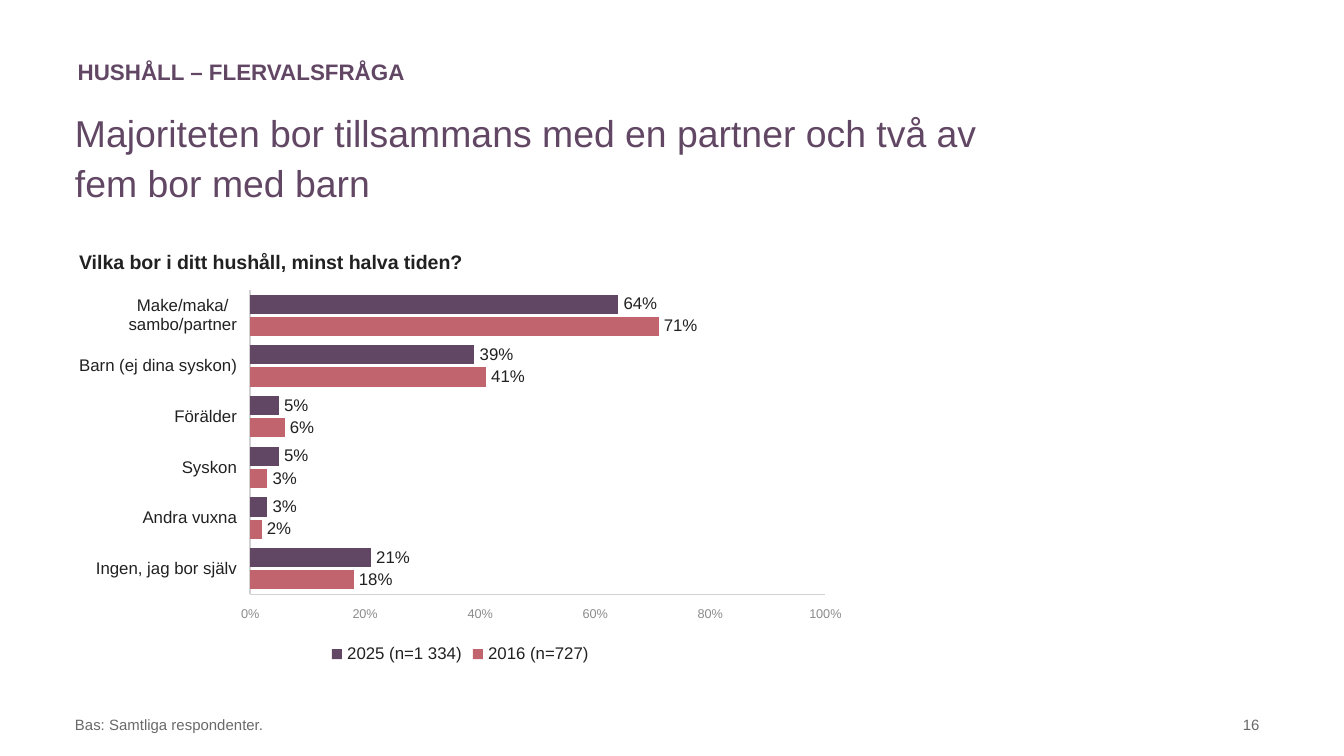
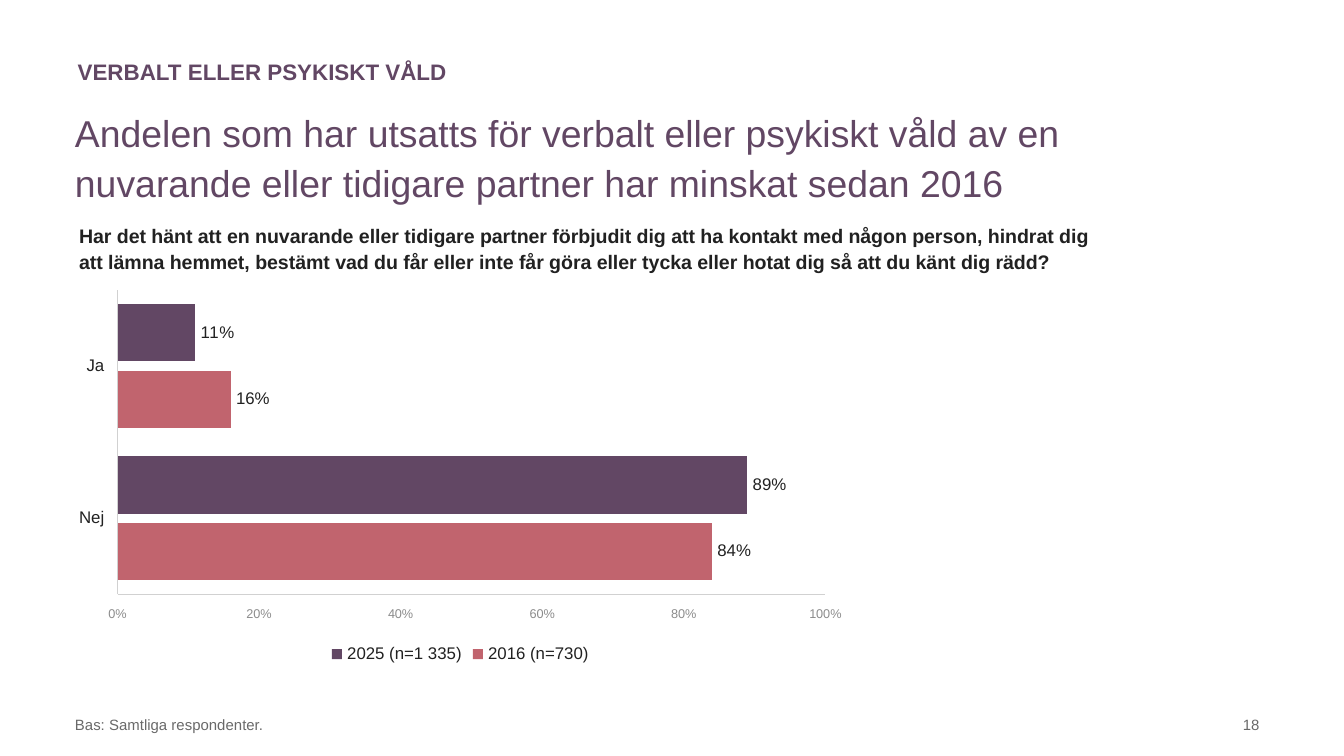
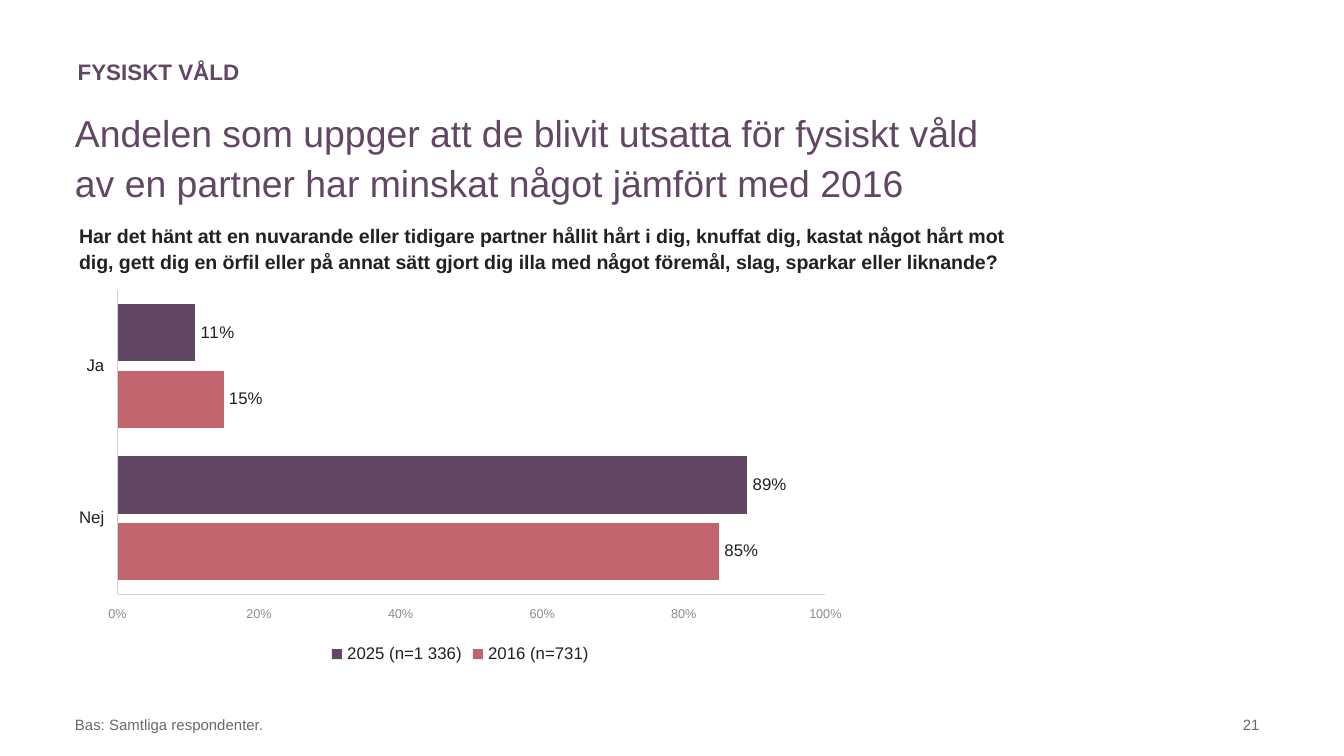
from collections import namedtuple

from pptx import Presentation
from pptx.chart.data import CategoryChartData as ChartData
from pptx.dml.color import RGBColor
from pptx.enum.chart import XL_CHART_TYPE as Kind
from pptx.enum.chart import XL_LABEL_POSITION as Spot
from pptx.enum.chart import XL_LEGEND_POSITION as Side
from pptx.enum.chart import XL_TICK_LABEL_POSITION as Place
from pptx.enum.chart import XL_TICK_MARK as Tick
from pptx.enum.text import MSO_ANCHOR as Anchor
from pptx.enum.text import PP_ALIGN as Align
from pptx.util import Inches, Pt

PLUM = RGBColor(0x62, 0x47, 0x64)
ROSE = RGBColor(0xC1, 0x64, 0x6E)
INK = RGBColor(0x21, 0x21, 0x21)
GREY = RGBColor(0x69, 0x69, 0x69)
PALE = RGBColor(0x8C, 0x8C, 0x8C)
RULE = RGBColor(0xD1, 0xD1, 0xD1)

FACE = "Arial"
PERCENT = "General\\%"
WIDTH = Inches(10)
HEIGHT = WIDTH * 9 // 16

Box = namedtuple("Box", "left top width height")
HEAD = Box(0.46, 0.19, 8.37, 1.89)
PLOT = Box(0.47, 2.1, 5.91, 2.88)
FOOT = Box(0.46, 5.21, 9.01, 0.3)

PAIR = ["Nej", "Ja"]
PAGES = [
    dict(
        topic="HUSHÅLL – FLERVALSFRÅGA",
        claim="Majoriteten bor tillsammans med en partner och två av fem bor med barn",
        ask="Vilka bor i ditt hushåll, minst halva tiden?",
        wide=(7.14, 5.91),
        page="16",
        cats=["Ingen, jag bor själv", "Andra vuxna", "Syskon", "Förälder",
              "Barn (ej dina syskon)", "Make/maka/sambo/partner"],
        rows={"2016 (n=727)": [18, 2, 3, 6, 41, 71],
              "2025 (n=1 334)": [21, 3, 5, 5, 39, 64]},
    ),
    dict(
        topic="VERBALT ELLER PSYKISKT VÅLD",
        claim="Andelen som har utsatts för verbalt eller psykiskt våld av en "
              "nuvarande eller tidigare partner har minskat sedan 2016",
        ask="Har det hänt att en nuvarande eller tidigare partner förbjudit dig "
            "att ha kontakt med någon person, hindrat dig att lämna hemmet, "
            "bestämt vad du får eller inte får göra eller tycka eller hotat dig "
            "så att du känt dig rädd?",
        wide=(8.37, 7.8),
        page="18",
        cats=PAIR,
        rows={"2016 (n=730)": [84, 16], "2025 (n=1 335)": [89, 11]},
    ),
    dict(
        topic="FYSISKT VÅLD",
        claim="Andelen som uppger att de blivit utsatta för fysiskt våld av en "
              "partner har minskat något jämfört med 2016",
        ask="Har det hänt att en nuvarande eller tidigare partner hållit hårt i "
            "dig, knuffat dig, kastat något hårt mot dig, gett dig en örfil "
            "eller på annat sätt gjort dig illa med något föremål, slag, "
            "sparkar eller liknande?",
        wide=(7.14, 7.14),
        page="21",
        cats=PAIR,
        rows={"2016 (n=731)": [85, 15], "2025 (n=1 336)": [89, 11]},
    ),
]


def apply(item, form):
    for key, value in form.items():
        setattr(item, key, value)


def style(font, size, color, bold=False):
    apply(font, dict(name=FACE, size=Pt(size), bold=bold))
    font.color.rgb = color


def write(slide, box, text, size, color, bold=False, anchor=Anchor.BOTTOM, **form):
    frame = slide.shapes.add_textbox(*map(Inches, box)).text_frame
    apply(frame, dict(word_wrap=True, vertical_anchor=anchor))
    para = frame.paragraphs[0]
    apply(para, form)
    run = para.add_run()
    run.text = text
    style(run.font, size, color, bold)


def add_head(slide, box, page):
    left, top = box.left, box.top
    claim, ask = page["wide"]
    write(slide, Box(left + 0.02, top, 7.14, 0.49), page["topic"], 12, PLUM, True)
    write(slide, Box(left, top + 0.55, claim, 0.86), page["claim"], 20, PLUM,
          anchor=Anchor.TOP, line_spacing=1.1)
    write(slide, Box(left + 0.03, top + 1.45, ask, 0.44), page["ask"], 10.5, INK,
          True, line_spacing=1.1)


def add_foot(slide, box, page):
    note = box._replace(width=7.8)
    num = box._replace(left=box.left + box.width - 1.07, width=1.07)
    write(slide, note, "Bas: Samtliga respondenter.", 8, GREY)
    write(slide, num, page["page"], 8, GREY, alignment=Align.RIGHT)


def set_axis(axis, size, color):
    apply(axis, dict(has_major_gridlines=False, major_tick_mark=Tick.NONE,
                     minor_tick_mark=Tick.NONE, tick_label_position=Place.LOW))
    line = axis.format.line
    line.color.rgb = RULE
    line.width = Pt(0.75)
    style(axis.tick_labels.font, size, color)


def add_bars(slide, box, page):
    data = ChartData(number_format=PERCENT)
    data.categories = page["cats"]
    for name, vals in page["rows"].items():
        data.add_series(name, vals)
    chart = slide.shapes.add_chart(Kind.BAR_CLUSTERED, *map(Inches, box), data).chart
    apply(chart, dict(has_title=False, has_legend=True))
    style(chart.font, 10, INK)
    apply(chart.legend, dict(position=Side.BOTTOM, include_in_layout=False))
    style(chart.legend.font, 9, INK)

    set_axis(chart.category_axis, 9, INK)
    scale = chart.value_axis
    set_axis(scale, 6.8, PALE)
    apply(scale, dict(minimum_scale=0, maximum_scale=100, major_unit=20))
    apply(scale.tick_labels, dict(number_format=PERCENT, number_format_is_linked=False))

    plot = chart.plots[0]
    apply(plot, dict(gap_width=50, overlap=-16, vary_by_categories=False,
                     has_data_labels=True))
    apply(plot.data_labels, dict(show_value=True, position=Spot.OUTSIDE_END,
                                 number_format=PERCENT, number_format_is_linked=False))
    style(plot.data_labels.font, 9, INK)
    for bars, color in zip(plot.series, (ROSE, PLUM)):
        bars.format.fill.solid()
        bars.format.fill.fore_color.rgb = color


def main():
    deck = Presentation()
    apply(deck, dict(slide_width=WIDTH, slide_height=HEIGHT))
    for page in PAGES:
        slide = deck.slides.add_slide(deck.slide_layouts[6])
        add_head(slide, HEAD, page)
        add_foot(slide, FOOT, page)
        add_bars(slide, PLOT, page)
    deck.save("out.pptx")


if __name__ == "__main__":
    main()
